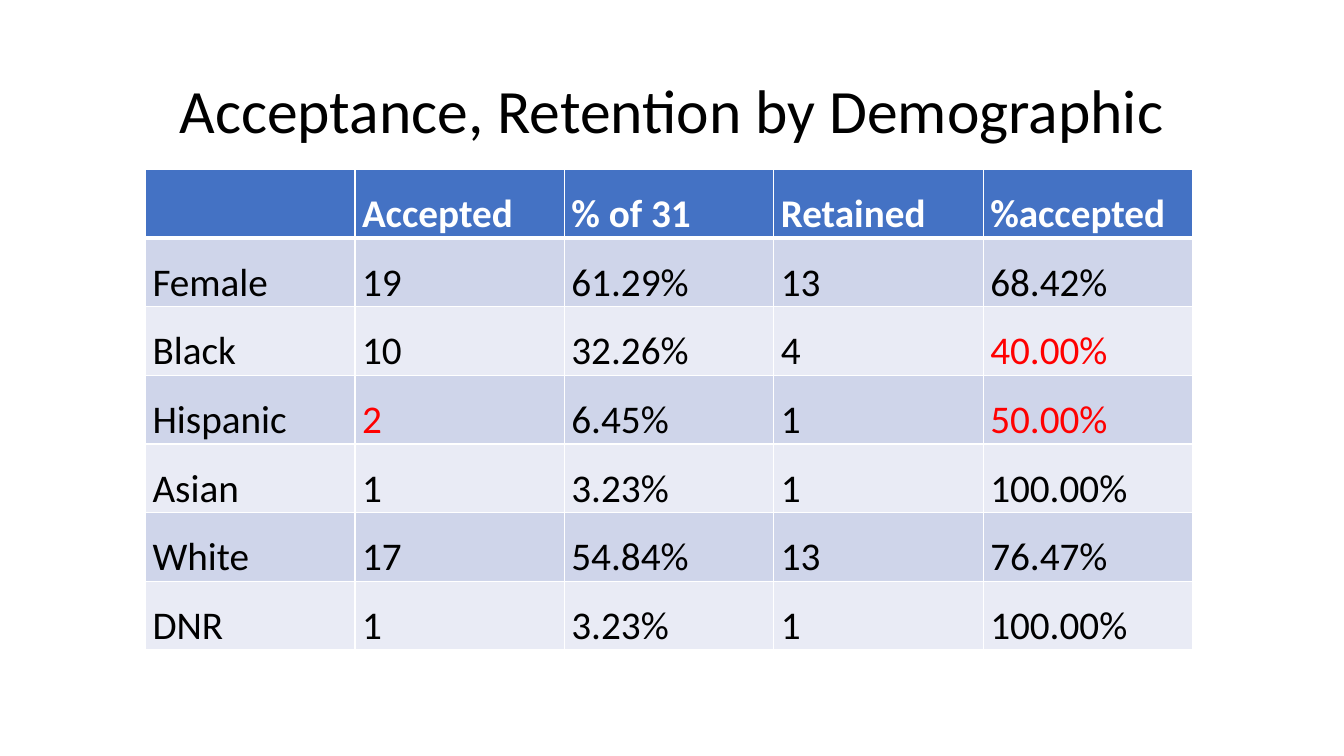
from lxml.etree import SubElement
from pptx import Presentation
from pptx.dml.color import RGBColor
from pptx.enum.text import MSO_ANCHOR as Anchor, PP_ALIGN as Align
from pptx.oxml.ns import qn
from pptx.util import Pt


def add_span(para, text, size, color, bold=False):
    span = para.add_run()
    span.text = text
    span.font.name = "Calibri"
    span.font.size = Pt(size)
    span.font.bold = bold
    span.font.color.rgb = RGBColor.from_string(color)


def add_border(cell, side, width):
    line = SubElement(cell._tc.get_or_add_tcPr(), qn(f"a:{side}"), w=str(Pt(width)))
    fill = SubElement(line, qn("a:solidFill"))
    SubElement(fill, qn("a:srgbClr"), val="FFFFFF")


deck = Presentation()
deck.slide_width, deck.slide_height = Pt(960), Pt(540)
page = deck.slides.add_slide(deck.slide_layouts[5])

title = page.shapes.title
title.left, title.top, title.width, title.height = Pt(66), Pt(28.75), Pt(828), Pt(104.4)
title.text_frame.vertical_anchor = Anchor.MIDDLE
title.text_frame.word_wrap = True
para = title.text_frame.paragraphs[0]
para.alignment = Align.CENTER
para.line_spacing = 0.9
add_span(para, "Acceptance, Retention by Demographic", 44, "000000")

rows = [
    ["", "Accepted", "% of 31", "Retained", "%accepted"],
    ["Female", "19", "61.29%", "13", "68.42%"],
    ["Black", "10", "32.26%", "4", "40.00%"],
    ["Hispanic", "2", "6.45%", "1", "50.00%"],
    ["Asian", "1", "3.23%", "1", "100.00%"],
    ["White", "17", "54.84%", "13", "76.47%"],
    ["DNR", "1", "3.23%", "1", "100.00%"],
]
red_values = {"2", "40.00%", "50.00%"}
frame = page.shapes.add_table(len(rows), len(rows[0]), Pt(104), Pt(121.25), Pt(748), Pt(343))
table = frame.table

for row_index, values in enumerate(rows):
    header = row_index == 0
    band = "4472C4" if header else "CFD5EA" if row_index % 2 else "E9EBF5"
    for column_index, value in enumerate(values):
        cell = table.cell(row_index, column_index)
        cell.vertical_anchor = Anchor.BOTTOM
        cell.margin_left = cell.margin_right = Pt(5)
        cell.margin_top = cell.margin_bottom = 0
        for side in ("lnL", "lnR", "lnT", "lnB"):
            edge = (row_index, side) in ((0, "lnB"), (1, "lnT"))
            add_border(cell, side, 3 if edge else 1)
        cell.fill.solid()
        cell.fill.fore_color.rgb = RGBColor.from_string(band)
        if value:
            color = "FFFFFF" if header else "FF0000" if value in red_values else "000000"
            add_span(cell.text_frame.paragraphs[0], value, 28, color, header)

deck.save("out.pptx")
